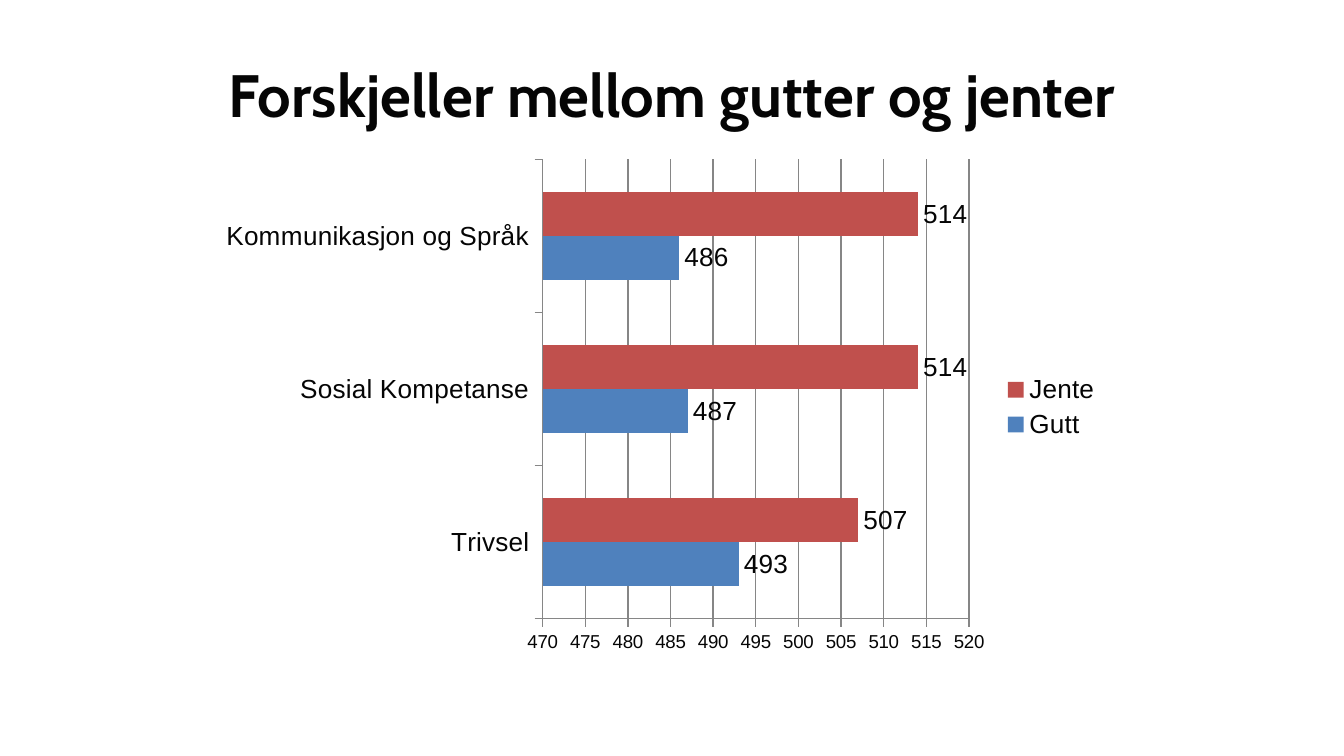
import pptx
import pptx.chart.data
import pptx.dml.color
import pptx.enum.chart
import pptx.enum.text
import pptx.oxml
import pptx.oxml.ns
import pptx.util

Inches = pptx.util.Inches
Pt = pptx.util.Pt

TITLE = "Forskjeller mellom gutter og jenter"
CATEGORIES = ["Trivsel", "Sosial Kompetanse", "Kommunikasjon og Språk"]
SERIES = [
    ("Gutt", (493, 487, 486), "4F81BD"),
    ("Jente", (507, 514, 514), "C0504D"),
]
PLOT_AREA = {"x": 0.37, "y": 0.02, "w": 0.47, "h": 0.89}
TEXT_COLOR = "050505"
LINE_COLOR = "868686"


def rgb(value):
    return pptx.dml.color.RGBColor.from_string(value)


def style_font(font, size, name="Arial", bold=False):
    font.size = Pt(size)
    font.name = name
    font.bold = bold
    font.color.rgb = rgb(TEXT_COLOR)


def style_line(line):
    line.color.rgb = rgb(LINE_COLOR)
    line.width = Pt(0.75)


def place_plot_area(chart):
    plot_area = chart.element.chart.plotArea
    for layout in plot_area.findall(pptx.oxml.ns.qn("c:layout")):
        plot_area.remove(layout)
    modes = "".join(f'<c:{key}Mode val="edge"/>' for key in "xy")
    sizes = "".join(f'<c:{key} val="{value}"/>' for key, value in PLOT_AREA.items())
    plot_area.insert(0, pptx.oxml.parse_xml(
        f'<c:layout {pptx.oxml.ns.nsdecls("c")}><c:manualLayout>'
        f'<c:layoutTarget val="inner"/>{modes}{sizes}'
        '</c:manualLayout></c:layout>'))


def add_title(slide):
    title = slide.shapes.title
    title.left, title.top = Inches(0.5), Inches(0.23)
    title.width, title.height = Inches(9), Inches(0.94)
    frame = title.text_frame
    frame.text = TITLE
    frame.vertical_anchor = pptx.enum.text.MSO_ANCHOR.MIDDLE
    paragraph = frame.paragraphs[0]
    paragraph.alignment = pptx.enum.text.PP_ALIGN.CENTER
    style_font(paragraph.font, 32, "Cabin", True)


def add_bar_chart(slide):
    data = pptx.chart.data.CategoryChartData()
    data.categories = CATEGORIES
    for name, values, _ in SERIES:
        data.add_series(name, values)
    chart = slide.shapes.add_chart(
        pptx.enum.chart.XL_CHART_TYPE.BAR_CLUSTERED,
        Inches(1.54), Inches(1.11), Inches(6.75), Inches(3.84), data).chart
    style_font(chart.font, 10)
    chart.has_title = False
    chart.has_legend = True
    chart.legend.position = pptx.enum.chart.XL_LEGEND_POSITION.RIGHT
    chart.legend.include_in_layout = False
    style_font(chart.legend.font, 14)

    style_font(chart.category_axis.tick_labels.font, 14)
    value_axis = chart.value_axis
    value_axis.minimum_scale = 470
    value_axis.maximum_scale = 520
    value_axis.major_unit = 5
    value_axis.has_major_gridlines = True
    style_line(value_axis.major_gridlines.format.line)
    for axis in (chart.category_axis, value_axis):
        axis.major_tick_mark = pptx.enum.chart.XL_TICK_MARK.OUTSIDE
        style_line(axis.format.line)

    plot = chart.plots[0]
    plot.gap_width = 150
    plot.overlap = 0
    plot.vary_by_categories = False
    for series, (_, _, color) in zip(plot.series, SERIES):
        series.format.fill.solid()
        series.format.fill.fore_color.rgb = rgb(color)
        labels = series.data_labels
        labels.show_value = True
        labels.position = pptx.enum.chart.XL_LABEL_POSITION.OUTSIDE_END
        style_font(labels.font, 14)
    place_plot_area(chart)


def main():
    presentation = pptx.Presentation()
    presentation.slide_width = Inches(10)
    presentation.slide_height = Inches(10) * 9 // 16
    slide = presentation.slides.add_slide(presentation.slide_layouts[5])
    slide.background.fill.solid()
    slide.background.fill.fore_color.rgb = rgb("FFFFFF")
    add_title(slide)
    add_bar_chart(slide)
    presentation.save("out.pptx")


if __name__ == "__main__":
    main()
